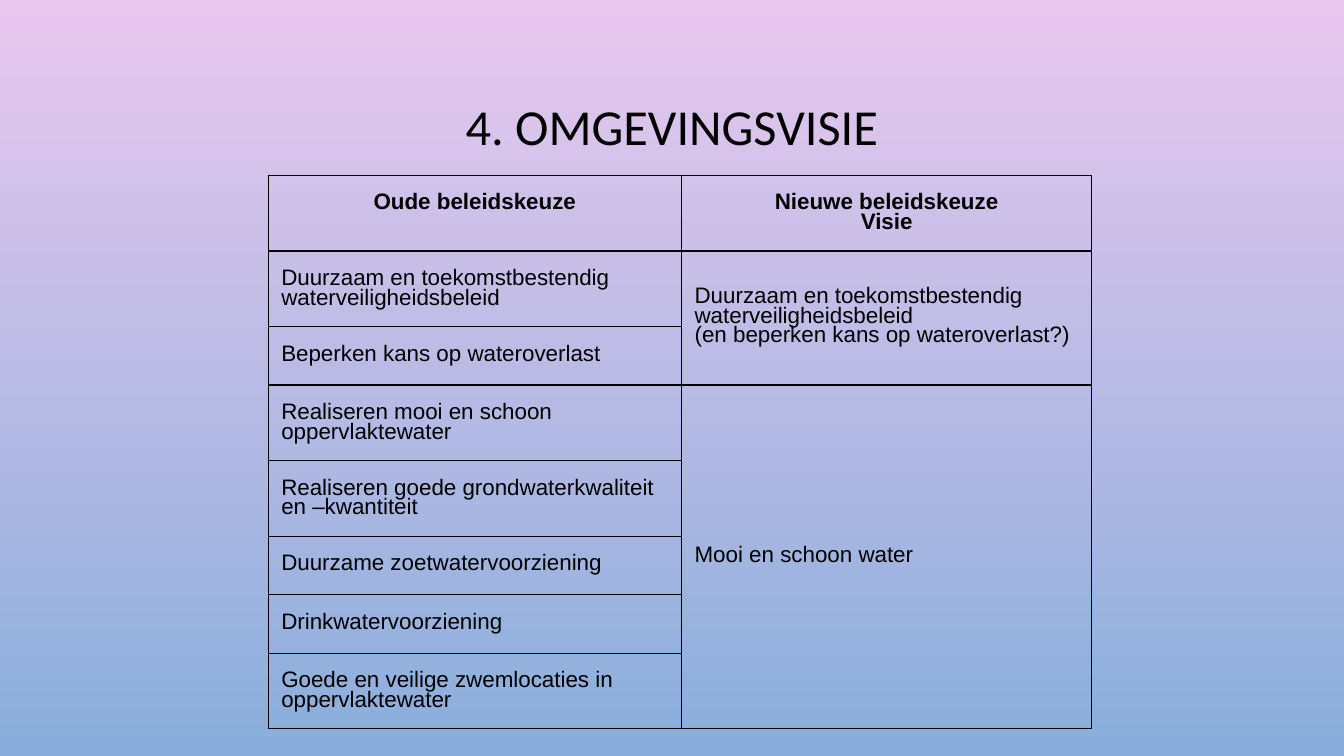
from lxml import etree
from pptx import Presentation
from pptx import util as u
from pptx.dml.color import RGBColor
from pptx.enum import text
from pptx.oxml.ns import qn

BLACK = RGBColor(0x00, 0x00, 0x00)
PINK = RGBColor(0xE9, 0xC8, 0xEF)
BLUE = RGBColor(0x89, 0xAE, 0xDB)

LINE_HEIGHT = u.Pt(14)
TWO_LINE_ROW, ONE_LINE_ROW = 0.75, 0.58
COLUMN_WIDTHS = (4.1, 4.07)

HEADINGS = ("Oude beleidskeuze", "Nieuwe beleidskeuze\vVisie")
OLD_CHOICES = (
    "Duurzaam en toekomstbestendig\vwaterveiligheidsbeleid",
    "Beperken kans op wateroverlast",
    "Realiseren mooi en schoon\voppervlaktewater",
    "Realiseren goede grondwaterkwaliteit\ven –kwantiteit",
    "Duurzame zoetwatervoorziening",
    "Drinkwatervoorziening",
    "Goede en veilige zwemlocaties in\voppervlaktewater",
)
# Each new choice with the first and last table row it covers
NEW_CHOICES = (
    ("Duurzaam en toekomstbestendig\vwaterveiligheidsbeleid\v"
     "(en beperken kans op wateroverlast?)", 1, 2),
    ("Mooi en schoon water", 3, 7),
)


def apply_format(target, values):
    for name, value in values.items():
        setattr(target, name, value)


def paint_background(slide):
    fill = slide.background.fill
    fill.gradient()
    fill.gradient_angle = 270
    for stop, color, position in zip(fill.gradient_stops, (PINK, BLUE), (0, 1)):
        stop.color.rgb = color
        stop.position = position


def place_title(slide, left, top, width, height):
    title = slide.shapes.title
    apply_format(title, {"left": u.Inches(left), "top": u.Inches(top),
                         "width": u.Inches(width), "height": u.Inches(height)})
    title.text = "4. OMGEVINGSVISIE"
    apply_format(title.text_frame, {
        "vertical_anchor": text.MSO_ANCHOR.MIDDLE, "word_wrap": True,
        "auto_size": text.MSO_AUTO_SIZE.NONE, "margin_bottom": u.Inches(0.6)})
    heading = title.text_frame.paragraphs[0]
    apply_format(heading, {"alignment": text.PP_ALIGN.CENTER, "line_spacing": 0.9})
    apply_format(heading.font, {"name": "Calibri", "size": u.Pt(36), "bold": False})
    heading.font.color.rgb = BLACK


def draw_borders(cell):
    properties = cell._tc.get_or_add_tcPr()
    for index, side in enumerate(("a:lnL", "a:lnR", "a:lnT", "a:lnB")):
        border = etree.Element(qn(side), w=str(u.Pt(1)))
        fill = etree.SubElement(border, qn("a:solidFill"))
        etree.SubElement(fill, qn("a:srgbClr"), val=str(BLACK))
        properties.insert(index, border)


def write_cell(cell, wording, centred=False, bold=False, middle=False):
    cell.text = wording
    apply_format(cell, {
        "margin_left": u.Inches(0.07 if centred else 0.13),
        "margin_right": u.Inches(0.07),
        "margin_top": 0 if middle else LINE_HEIGHT,
        "margin_bottom": 0,
        "vertical_anchor": text.MSO_ANCHOR.MIDDLE if middle else text.MSO_ANCHOR.TOP})
    for paragraph in cell.text_frame.paragraphs:
        apply_format(paragraph, {
            "alignment": text.PP_ALIGN.CENTER if centred else text.PP_ALIGN.LEFT,
            "line_spacing": LINE_HEIGHT})
        apply_format(paragraph.font, {"name": "Arial", "size": u.Pt(16), "bold": bold})
        paragraph.font.color.rgb = BLACK


def place_choices(slide, left, top):
    heights = [TWO_LINE_ROW] + [
        TWO_LINE_ROW if "\v" in choice else ONE_LINE_ROW for choice in OLD_CHOICES]
    choices = slide.shapes.add_table(
        len(heights), len(COLUMN_WIDTHS), u.Inches(left), u.Inches(top),
        u.Inches(sum(COLUMN_WIDTHS)), u.Inches(sum(heights))).table
    apply_format(choices, {"first_row": False, "horz_banding": False})
    for column, width in zip(choices.columns, COLUMN_WIDTHS):
        column.width = u.Inches(width)
    for row, height in zip(choices.rows, heights):
        row.height = u.Inches(height)
    for cell in choices.iter_cells():
        cell.fill.background()
        draw_borders(cell)

    # Header row
    for column, heading in enumerate(HEADINGS):
        write_cell(choices.cell(0, column), heading, centred=True, bold=True)
    # Old choices, one a row
    for row, choice in enumerate(OLD_CHOICES, start=1):
        write_cell(choices.cell(row, 0), choice)
    # New choices, each across several old ones
    for choice, first, last in NEW_CHOICES:
        choices.cell(first, 1).merge(choices.cell(last, 1))
        write_cell(choices.cell(first, 1), choice, middle=True)


def main():
    deck = Presentation()
    apply_format(deck, {"slide_width": u.Inches(13.33), "slide_height": u.Inches(7.5)})
    slide = deck.slides.add_slide(deck.slide_layouts.get_by_name("Title Only"))
    paint_background(slide)
    place_title(slide, 1, 0.68, 11.33, 1.75)
    place_choices(slide, 2.66, 1.74)
    deck.save("out.pptx")


if __name__ == "__main__":
    main()
